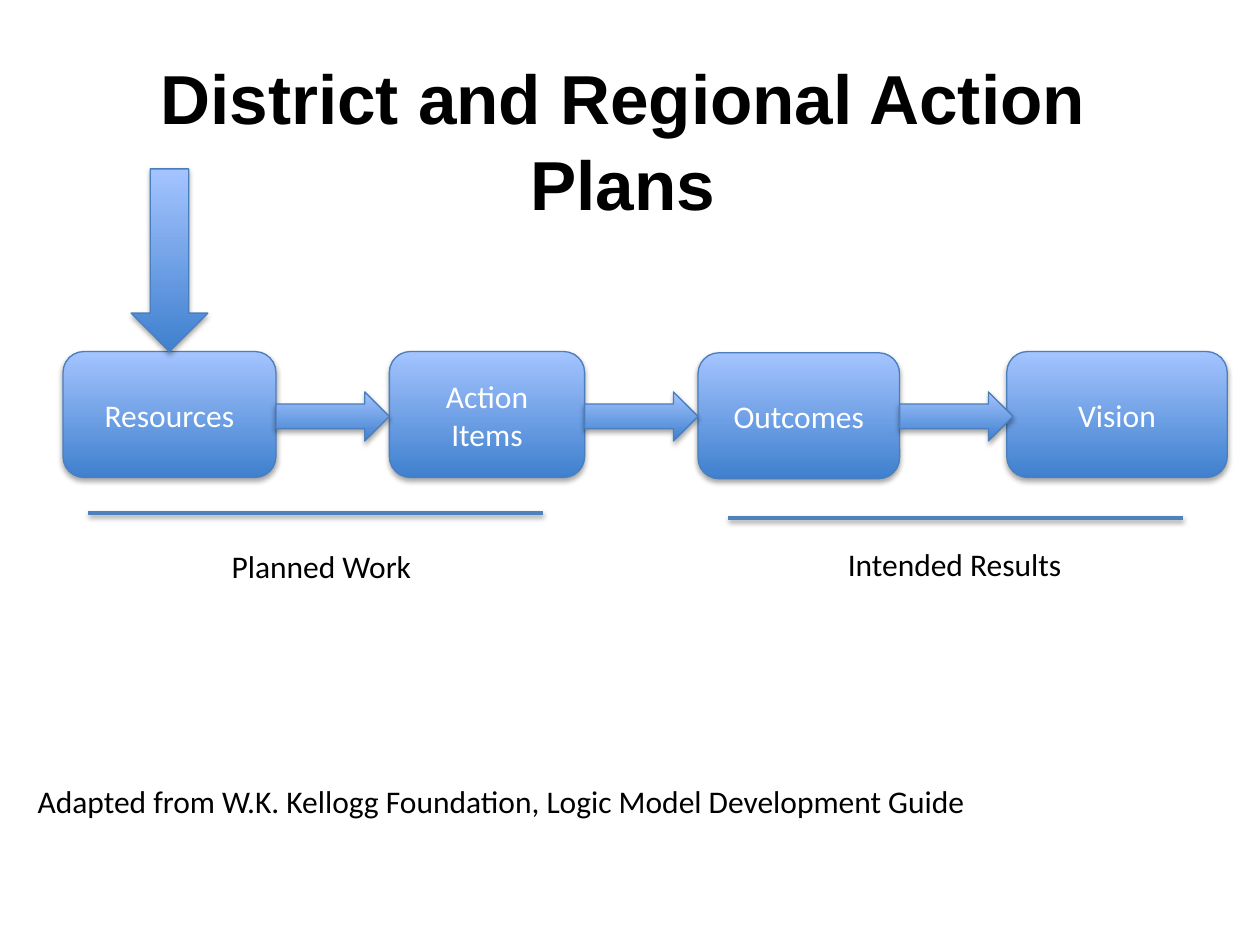
from dataclasses import dataclass

from lxml.etree import SubElement
from pptx import Presentation
from pptx.dml.color import RGBColor
from pptx.enum.shapes import MSO_CONNECTOR, MSO_SHAPE
from pptx.enum.text import MSO_ANCHOR, MSO_AUTO_SIZE, PP_ALIGN
from pptx.oxml.ns import qn
from pptx.util import Inches, Pt


@dataclass(frozen=True)
class Theme:
    black: RGBColor = RGBColor(0x00, 0x00, 0x00)
    white: RGBColor = RGBColor(0xFF, 0xFF, 0xFF)
    dark: RGBColor = RGBColor(0x3F, 0x80, 0xCE)
    light: RGBColor = RGBColor(0xA4, 0xC4, 0xFF)
    outline: RGBColor = RGBColor(0x4B, 0x7E, 0xBC)
    rule: RGBColor = RGBColor(0x4F, 0x81, 0xBD)
    title_font: str = "Arial"
    body_font: str = "Calibri"
    title_size: float = 39.6
    body_size: float = 18


THEME = Theme()


def style_text(tf, color, font=THEME.body_font, size=THEME.body_size, bold=False):
    for r in (r for p in tf.paragraphs for r in p.runs):
        r.font.name, r.font.size, r.font.bold = font, Pt(size), bold
        r.font.color.rgb = color


def add_shadow(sp, opacity, distance):
    """Soft black shadow falling straight down."""
    effects = SubElement(sp._element.spPr, qn("a:effectLst"))
    shadow = SubElement(effects, qn("a:outerShdw"), blurRad=str(Pt(3.1)),
                        dist=str(Pt(distance)), dir="5400000", rotWithShape="0")
    color = SubElement(shadow, qn("a:srgbClr"), val=str(THEME.black))
    SubElement(color, qn("a:alpha"), val=str(opacity * 1000))


def add_title(s, text):
    title = s.shapes.title
    title.left, title.top = Inches(0.39), Inches(0.4)
    title.width, title.height = Inches(9.11), Inches(1.39)
    tf = title.text_frame
    tf.text = text
    tf.word_wrap = True
    tf.auto_size = MSO_AUTO_SIZE.NONE
    tf.vertical_anchor = MSO_ANCHOR.MIDDLE
    p = tf.paragraphs[0]
    p.alignment = PP_ALIGN.CENTER
    p.line_spacing = 1.04
    style_text(tf, THEME.black, THEME.title_font, THEME.title_size, bold=True)


def add_block(s, kind, x, y, w, h, text=""):
    """Gradient box or block arrow."""
    sp = s.shapes.add_shape(kind, Inches(x), Inches(y), Inches(w), Inches(h))
    sp.fill.gradient()
    sp.fill.gradient_angle = 90
    for stop, color in zip(sp.fill.gradient_stops, (THEME.dark, THEME.light)):
        stop.color.rgb = color
    sp.line.color.rgb = THEME.outline
    sp.line.width = Pt(0.75)
    add_shadow(sp, 35, 1.8)
    if text:
        tf = sp.text_frame
        tf.text = text
        tf.word_wrap = True
        tf.vertical_anchor = MSO_ANCHOR.MIDDLE
        tf.paragraphs[0].alignment = PP_ALIGN.CENTER
        style_text(tf, THEME.white)


def add_rule(s, x, y, length):
    line = s.shapes.add_connector(MSO_CONNECTOR.STRAIGHT, Inches(x), Inches(y),
                                  Inches(x + length), Inches(y))
    line.line.color.rgb = THEME.rule
    line.line.width = Pt(2)
    add_shadow(line, 38, 1.6)


def add_label(s, text, x, y, w, wrap=True):
    tf = s.shapes.add_textbox(Inches(x), Inches(y), Inches(w), Inches(0.4)).text_frame
    tf.text = text
    tf.word_wrap = wrap
    tf.auto_size = MSO_AUTO_SIZE.SHAPE_TO_FIT_TEXT
    style_text(tf, THEME.black)


def main():
    prs = Presentation()
    prs.slide_width, prs.slide_height = Inches(10), Inches(7.5)
    s = prs.slides.add_slide(prs.slide_layouts[5])
    add_title(s, "District and Regional Action Plans")

    # Chain of steps
    steps = [("Resources", 0.5, 2.79, 1.69), ("Action Items", 3.09, 2.79, 1.55),
             ("Outcomes", 5.54, 2.8, 1.6), ("Vision", 7.99, 2.79, 1.75)]
    for text, x, y, w in steps:
        add_block(s, MSO_SHAPE.ROUNDED_RECTANGLE, x, y, w, 1, text)

    # An arrow leaves the right edge of every step but the last
    for _, x, _, w in steps[:-1]:
        add_block(s, MSO_SHAPE.RIGHT_ARROW, x + w, 3.11, 0.9, 0.39)

    # Phases below the chain
    add_label(s, "Planned Work", 1.74, 4.29, 2.7)
    add_rule(s, 0.7, 4.07, 3.61)
    add_rule(s, 5.78, 4.11, 3.61)
    add_label(s, "Intended Results", 6.63, 4.28, 1.92, wrap=False)

    # Pointer to the first step, and the reference
    add_block(s, MSO_SHAPE.DOWN_ARROW, 1.04, 1.34, 0.61, 1.45)
    add_label(s, "Adapted from W.K. Kellogg Foundation, Logic Model Development Guide",
              0.2, 6.16, 8.19)

    prs.save("out.pptx")


if __name__ == "__main__":
    main()
